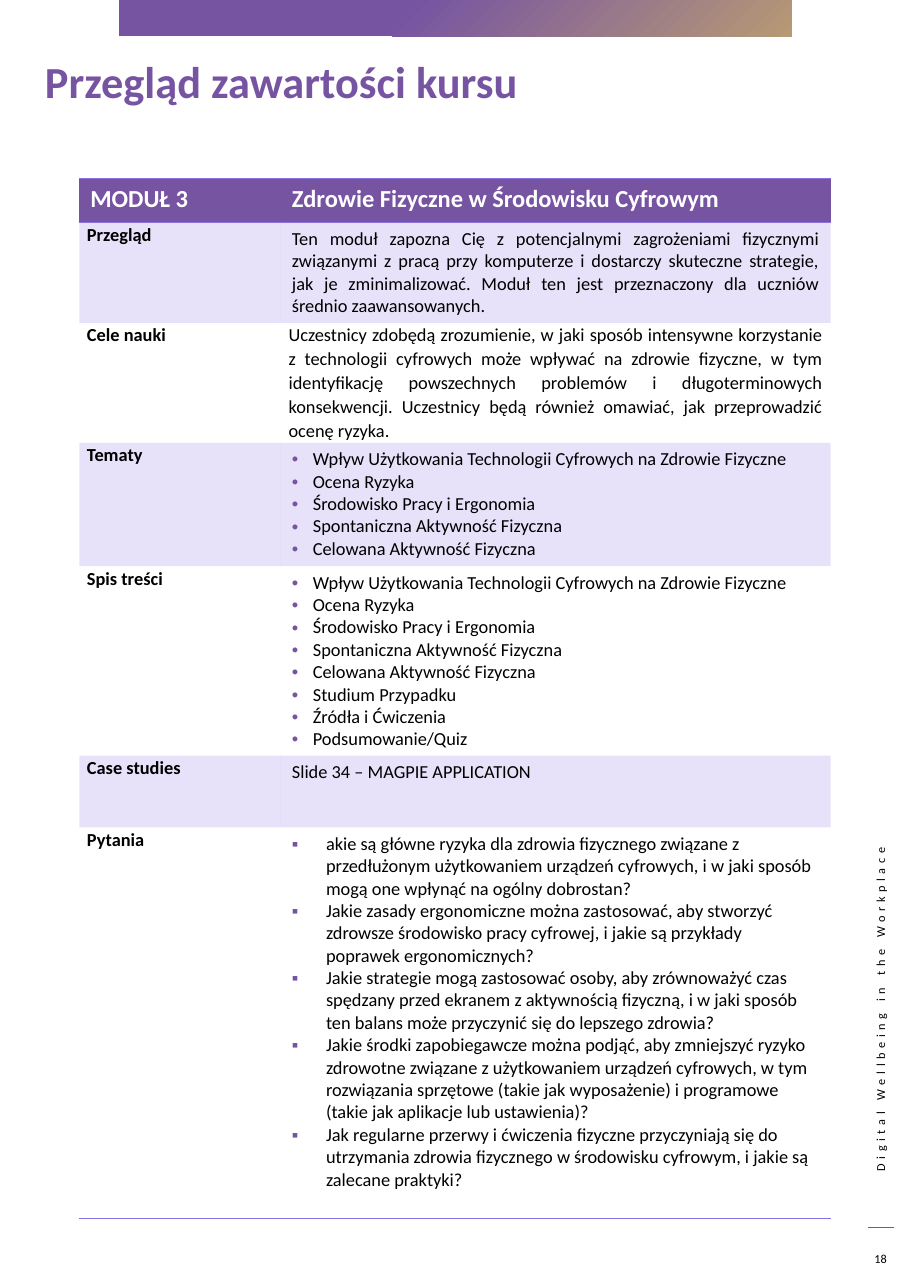
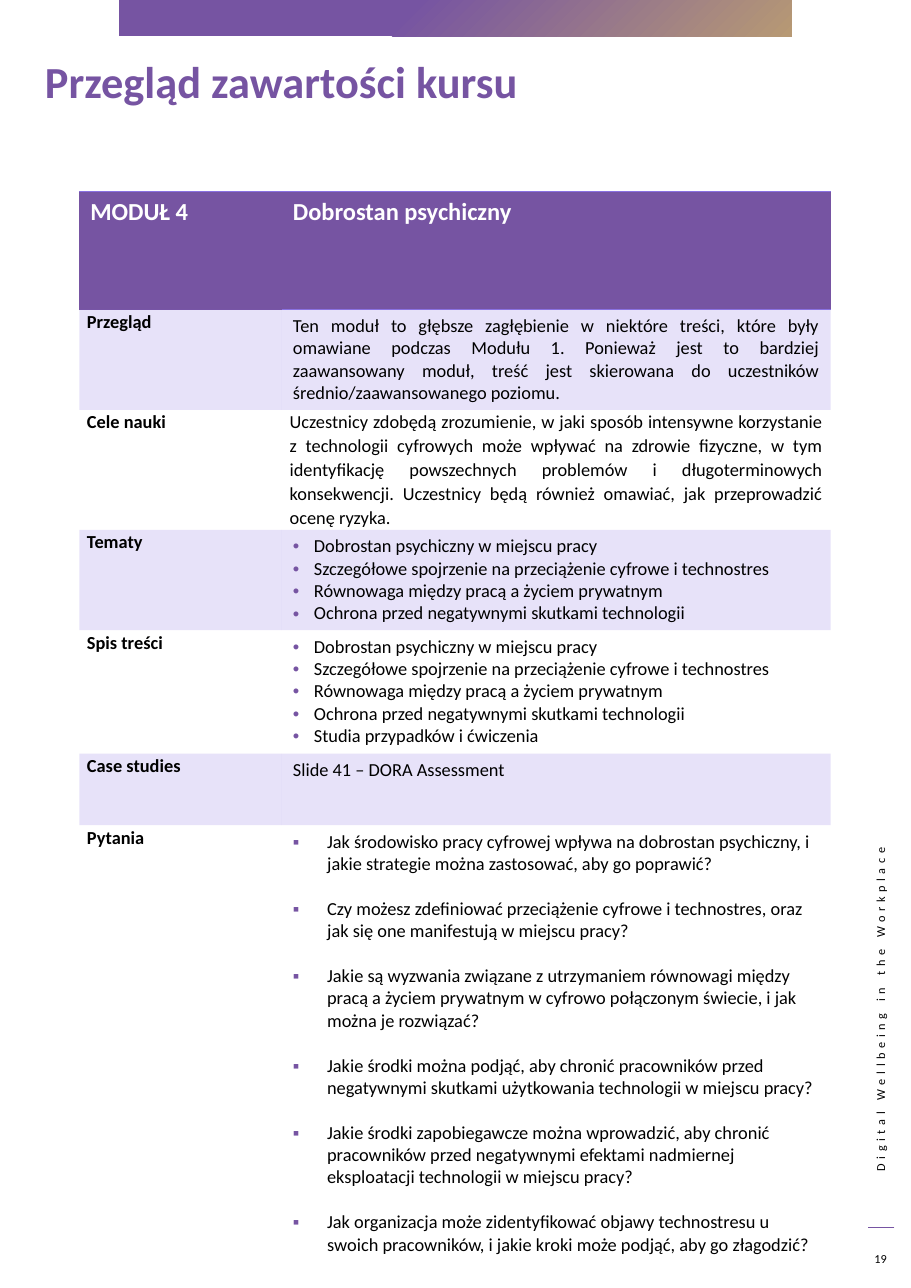
from dataclasses import dataclass

from lxml.etree import SubElement
from pptx import Presentation
from pptx.dml.color import RGBColor
from pptx.enum.shapes import MSO_CONNECTOR, MSO_SHAPE
from pptx.enum.text import MSO_ANCHOR, PP_ALIGN
from pptx.oxml import parse_xml
from pptx.oxml.ns import nsdecls, qn
from pptx.util import Inches, Pt

PURPLE = RGBColor(0x76, 0x54, 0xA2)
LILAC = RGBColor(0x89, 0x71, 0xE1)
GOLD = RGBColor(0xB7, 0x99, 0x74)
BLACK = RGBColor(0, 0, 0)
WHITE = RGBColor(255, 255, 255)
FACE = "Calibri"
PLAIN = "{2D5ABB26-0587-4C30-8999-92F81FD0307C}"  # no style, no grid
LABELS = ("Przegląd", "Cele nauki", "Tematy", "Spis treści", "Case studies", "Pytania")
GOALS = (
    "Uczestnicy zdobędą zrozumienie, w jaki sposób intensywne korzystanie z technologii "
    "cyfrowych może wpływać na zdrowie fizyczne, w tym identyfikację powszechnych problemów "
    "i długoterminowych konsekwencji. Uczestnicy będą również omawiać, jak przeprowadzić "
    "ocenę ryzyka."
)


@dataclass(frozen=True)
class Style:
    size: float
    color: RGBColor = BLACK
    bold: bool = False


@dataclass(frozen=True)
class Bullet:
    mark: str
    indent: float


@dataclass(frozen=True)
class Module:
    page: int
    name: str
    title: str
    intro: str
    topics: tuple[str, ...]
    extras: tuple[str, ...]
    study: str
    asks: tuple[str, ...]
    gap: float  # points between questions
    top: float
    split: float  # width of the label column
    rows: tuple[float, ...]
    lines: tuple[str, str]  # header borders, left and right
    closed: bool  # line under the last row


TITLE = Style(29, PURPLE, True)
HEAD = Style(16, WHITE, True)
LABEL = Style(12, bold=True)
BODY = Style(12)
SMALL = Style(8)
DOT = Bullet("•", 0.19)
SQUARE = Bullet("▪", 0.31)

MODULES = (
    Module(
        page=18,
        name="MODUŁ 3",
        title="Zdrowie Fizyczne w Środowisku Cyfrowym",
        intro="Ten moduł zapozna Cię z potencjalnymi zagrożeniami fizycznymi związanymi z pracą "
        "przy komputerze i dostarczy skuteczne strategie, jak je zminimalizować. Moduł ten jest "
        "przeznaczony dla uczniów średnio zaawansowanych.",
        topics=(
            "Wpływ Użytkowania Technologii Cyfrowych na Zdrowie Fizyczne",
            "Ocena Ryzyka",
            "Środowisko Pracy i Ergonomia",
            "Spontaniczna Aktywność Fizyczna",
            "Celowana Aktywność Fizyczna",
        ),
        extras=("Studium Przypadku", "Źródła i Ćwiczenia", "Podsumowanie/Quiz"),
        study="Slide 34 – MAGPIE APPLICATION",
        asks=(
            "akie są główne ryzyka dla zdrowia fizycznego związane z przedłużonym użytkowaniem "
            "urządzeń cyfrowych, i w jaki sposób mogą one wpłynąć na ogólny dobrostan?",
            "Jakie zasady ergonomiczne można zastosować, aby stworzyć zdrowsze środowisko pracy "
            "cyfrowej, i jakie są przykłady poprawek ergonomicznych?",
            "Jakie strategie mogą zastosować osoby, aby zrównoważyć czas spędzany przed ekranem "
            "z aktywnością fizyczną, i w jaki sposób ten balans może przyczynić się do lepszego "
            "zdrowia?",
            "Jakie środki zapobiegawcze można podjąć, aby zmniejszyć ryzyko zdrowotne związane "
            "z użytkowaniem urządzeń cyfrowych, w tym rozwiązania sprzętowe (takie jak "
            "wyposażenie) i programowe (takie jak aplikacje lub ustawienia)?",
            "Jak regularne przerwy i ćwiczenia fizyczne przyczyniają się do utrzymania zdrowia "
            "fizycznego w środowisku cyfrowym, i jakie są zalecane praktyki?",
        ),
        gap=0,
        top=1.62,
        split=1.83,
        rows=(0.4, 0.91, 1.09, 1.12, 1.72, 0.65, 3.55),
        lines=("TB", "TB"),
        closed=True,
    ),
    Module(
        page=19,
        name="MODUŁ 4",
        title="Dobrostan psychiczny",
        intro="Ten moduł to głębsze zagłębienie w niektóre treści, które były omawiane podczas "
        "Modułu 1. Ponieważ jest to bardziej zaawansowany moduł, treść jest skierowana do "
        "uczestników średnio/zaawansowanego poziomu.",
        topics=(
            "Dobrostan psychiczny w miejscu pracy",
            "Szczegółowe spojrzenie na przeciążenie cyfrowe i technostres",
            "Równowaga między pracą a życiem prywatnym",
            "Ochrona przed negatywnymi skutkami technologii",
        ),
        extras=("Studia przypadków i ćwiczenia",),
        study="Slide 41 – DORA Assessment",
        asks=(
            "Jak środowisko pracy cyfrowej wpływa na dobrostan psychiczny, i jakie strategie "
            "można zastosować, aby go poprawić?",
            "Czy możesz zdefiniować przeciążenie cyfrowe i technostres, oraz jak się one "
            "manifestują w miejscu pracy?",
            "Jakie są wyzwania związane z utrzymaniem równowagi między pracą a życiem prywatnym "
            "w cyfrowo połączonym świecie, i jak można je rozwiązać?",
            "Jakie środki można podjąć, aby chronić pracowników przed negatywnymi skutkami "
            "użytkowania technologii w miejscu pracy?",
            "Jakie środki zapobiegawcze można wprowadzić, aby chronić pracowników przed "
            "negatywnymi efektami nadmiernej eksploatacji technologii w miejscu pracy?",
            "Jak organizacja może zidentyfikować objawy technostresu u swoich pracowników, "
            "i jakie kroki może podjąć, aby go złagodzić?",
        ),
        gap=14.65,
        top=1.74,
        split=1.84,
        rows=(1.07, 0.91, 1.09, 0.91, 1.12, 0.65, 4.2),
        lines=("T", "TB"),
        closed=False,
    ),
)


def add_run(para, text: str, style: Style):
    run = para.add_run()
    run.text = text
    font = run.font
    font.name, font.size, font.bold = FACE, Pt(style.size), style.bold
    font.color.rgb = style.color
    return run


def add_text(slide, box: tuple, text: str, style: Style, align=PP_ALIGN.LEFT):
    """Add a one-line text box and return it with its run."""
    shape = slide.shapes.add_textbox(*map(Inches, box))
    shape.text_frame.word_wrap = True
    para = shape.text_frame.paragraphs[0]
    para.alignment = align
    return shape, add_run(para, text, style)


def add_mark(para, bullet: Bullet) -> None:
    props = para._p.get_or_add_pPr()
    props.set("marL", str(Inches(bullet.indent)))
    props.set("indent", str(-Inches(bullet.indent)))
    color = SubElement(props, qn("a:buClr"))
    SubElement(color, qn("a:srgbClr"), val=str(PURPLE))
    SubElement(props, qn("a:buFont"), typeface="Arial")
    SubElement(props, qn("a:buChar"), char=bullet.mark)


def add_band(slide) -> None:
    band = slide.shapes.add_shape(
        MSO_SHAPE.RECTANGLE, *map(Inches, (1.08, 0, 6.11, 0.33)))
    band.shadow.inherit = False
    band.line.fill.background()
    props = band._element.spPr
    props.find(qn("a:prstGeom")).addnext(parse_xml(
        f'<a:gradFill {nsdecls("a")}><a:gsLst>'
        f'<a:gs pos="0"><a:srgbClr val="{GOLD}"/></a:gs>'
        f'<a:gs pos="58000"><a:srgbClr val="{PURPLE}"/></a:gs></a:gsLst>'
        '<a:path path="circle"><a:fillToRect l="100000" t="100000"/></a:path>'
        '</a:gradFill>'))


def add_frame(slide, page: int) -> None:
    """Draw what every page shares: side text, rule, band, title and number."""
    side, run = add_text(slide, (6.26, 9.21, 3.47, 0.24),
                         "Digital Wellbeing in the Workplace", SMALL, PP_ALIGN.RIGHT)
    side.rotation = 270
    run.font._element.set("spc", "300")
    rule = slide.shapes.add_connector(
        MSO_CONNECTOR.STRAIGHT, *map(Inches, (8.12, 11.14, 7.88, 11.14)))
    rule.line.color.rgb, rule.line.width = PURPLE, Pt(0.75)
    SubElement(rule._element.spPr, qn("a:effectLst"))
    add_band(slide)
    add_text(slide, (0.31, 0.44, 7.11, 0.81), "Przegląd zawartości kursu", TITLE)
    number, _ = add_text(slide, (7.8, 11.28, 0.39, 0.29), str(page), SMALL, PP_ALIGN.CENTER)
    number.text_frame.vertical_anchor = MSO_ANCHOR.MIDDLE


def fill_cell(cell, texts: tuple[str, ...], style: Style, align=PP_ALIGN.LEFT,
              bullet: Bullet | None = None, tight: bool = False, gap: float = 0) -> None:
    """Write one paragraph per text; a tight cell has no top or bottom margin."""
    if tight:
        cell.margin_left = cell.margin_right = Inches(0.07)
        cell.margin_top = cell.margin_bottom = 0
    frame = cell.text_frame
    for index, text in enumerate(texts):
        para = frame.add_paragraph() if index else frame.paragraphs[0]
        para.alignment = align
        if bullet:
            add_mark(para, bullet)
        if tight:
            para.line_spacing = 1.07
        if index and gap:
            para.space_before = Pt(gap)
        add_run(para, text, style)


def paint(cell, color: RGBColor, alpha: int = 100) -> None:
    cell.fill.solid()
    cell.fill.fore_color.rgb = color
    if alpha < 100:
        tint = cell._tc.tcPr.find(".//" + qn("a:srgbClr"))
        SubElement(tint, qn("a:alpha"), val=str(alpha * 1000))


def add_edges(cell, sides: str) -> None:
    """Draw the named borders, T before B."""
    props = cell._tc.get_or_add_tcPr()
    for index, side in enumerate(sides):
        props.insert(index, parse_xml(
            f'<a:ln{side} {nsdecls("a")} w="{Pt(1)}"><a:solidFill>'
            f'<a:srgbClr val="{LILAC}"/></a:solidFill></a:ln{side}>'))


def add_grid(slide, module: Module) -> None:
    width = 6.82
    table = slide.shapes.add_table(
        len(module.rows), 2, Inches(0.72), Inches(module.top),
        Inches(width), Inches(sum(module.rows))).table
    table.first_row = table.horz_banding = False
    table._tbl.tblPr.find(qn("a:tableStyleId")).text = PLAIN
    table.columns[0].width = Inches(module.split)
    table.columns[1].width = Inches(width - module.split)
    for row, height in zip(table.rows, module.rows):
        row.height = Inches(height)

    for col, text in enumerate((module.name, module.title)):
        cell = table.cell(0, col)
        fill_cell(cell, (text,), HEAD)
        paint(cell, PURPLE)
        add_edges(cell, module.lines[col])

    bodies = (
        ((module.intro,), {"align": PP_ALIGN.JUSTIFY}),
        ((GOALS,), {"align": PP_ALIGN.JUSTIFY, "tight": True}),
        (module.topics, {"bullet": DOT}),
        (module.topics + module.extras, {"bullet": DOT}),
        ((module.study,), {}),
        (module.asks, {"bullet": SQUARE, "gap": module.gap}),
    )
    for index, (label, (texts, options)) in enumerate(zip(LABELS, bodies), 1):
        left, right = table.cell(index, 0), table.cell(index, 1)
        fill_cell(left, (label,), LABEL, tight=True)
        fill_cell(right, texts, BODY, **options)
        for cell in (left, right):
            if index % 2:
                paint(cell, LILAC, 20)
            else:
                cell.fill.background()
            if module.closed and index == len(LABELS):
                add_edges(cell, "B")


def main() -> None:
    deck = Presentation()
    deck.slide_width, deck.slide_height = Inches(8.27), Inches(11.69)
    for module in MODULES:
        slide = deck.slides.add_slide(deck.slide_layouts[6])
        add_frame(slide, module.page)
        add_grid(slide, module)
    deck.save("out.pptx")


if __name__ == "__main__":
    main()
